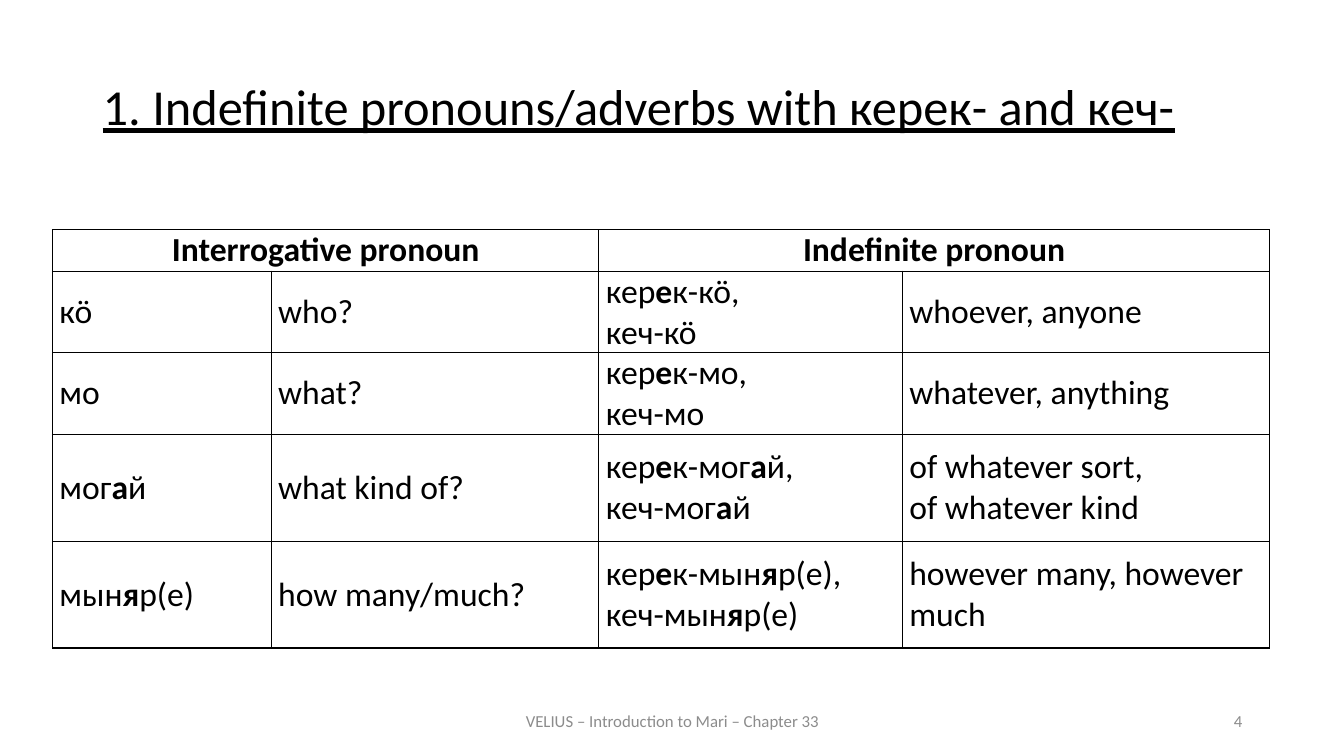
from lxml import etree
from pptx import Presentation
from pptx.dml.color import RGBColor
from pptx.enum.text import MSO_ANCHOR, PP_ALIGN
from pptx.oxml.ns import qn
from pptx.util import Inches, Pt

LEFT, CENTER, RIGHT, JUSTIFY = PP_ALIGN.LEFT, PP_ALIGN.CENTER, PP_ALIGN.RIGHT, PP_ALIGN.JUSTIFY
TOP, MIDDLE = MSO_ANCHOR.TOP, MSO_ANCHOR.MIDDLE
BLACK = RGBColor(0x00, 0x00, 0x00)
GREY = RGBColor(0x8C, 0x8C, 0x8C)
FONT = "Calibri"

COLUMN_WIDTHS = [2.17, 3.25, 3.01, 3.64]
ROW_HEIGHTS = [0.41, 0.81, 0.81, 1.06, 1.06]
HEADINGS = ["Interrogative pronoun", "Indefinite pronoun"]
STRESS = "*"
PRONOUNS = [
    ["кӧ", "who?", "кер*е*к-кӧ,\nкеч-кӧ", "whoever, anyone"],
    ["мо", "what?", "кер*е*к-мо,\nкеч-мо", "whatever, anything"],
    ["мог*а*й", "what kind of?", "кер*е*к-мог*а*й,\nкеч-мог*а*й",
     "of whatever sort,\nof whatever kind"],
    ["мын*я*р(е)", "how many/much?", "кер*е*к-мын*я*р(е),\nкеч-мын*я*р(е)",
     "however many, however much"],
]


def add_span(para, text, size, color, bold=False, underline=False):
    """Append one formatted run to a paragraph."""
    span = para.add_run()
    span.text = text
    span.font.name = FONT
    span.font.size = Pt(size)
    span.font.color.rgb = color
    span.font.bold = bold
    span.font.underline = underline


def add_line(page, box, text, size, color, align, anchor, underline=False):
    """Place a one-line text box and return its paragraph."""
    frame = page.shapes.add_textbox(*map(Inches, box)).text_frame
    frame.word_wrap = True
    frame.vertical_anchor = anchor
    para = frame.paragraphs[0]
    para.alignment = align
    add_span(para, text, size, color, underline=underline)
    return para


def add_title(page, box):
    """Place the underlined title."""
    para = add_line(page, box, "1. Indefinite pronouns/adverbs with керек- and кеч-",
                    36, BLACK, JUSTIFY, TOP, underline=True)
    para.line_spacing = 0.9
    para.space_before = Pt(12)


def add_footer(page, box):
    """Place the centred course name and the page number at the right."""
    left, top, width, height = box
    add_line(page, (left, top, 4.5, height), "VELIUS – Introduction to Mari – Chapter 33",
             12, GREY, CENTER, MIDDLE)
    add_line(page, (left + width - 3, top, 3, height), "4", 12, GREY, RIGHT, MIDDLE)


def draw_borders(cell):
    """Give a cell thin black lines on all four sides."""
    properties = cell._tc.get_or_add_tcPr()
    for index, side in enumerate(("a:lnL", "a:lnR", "a:lnT", "a:lnB")):
        line = etree.Element(qn(side), w=str(Pt(1)))
        fill = etree.SubElement(line, qn("a:solidFill"))
        etree.SubElement(fill, qn("a:srgbClr"), val=str(BLACK))
        properties.insert(index, line)


def fill_cell(cell, text, align, anchor, bold=False):
    """Write text into a cell, switching bold at each stress mark."""
    cell.vertical_anchor = anchor
    frame = cell.text_frame
    for number, line in enumerate(text.split("\n")):
        para = frame.add_paragraph() if number else frame.paragraphs[0]
        para.alignment = align
        for index, part in enumerate(line.split(STRESS)):
            add_span(para, part, 24, BLACK, bold=bold or index % 2 == 1)


def add_pronoun_table(page, box):
    """Place the table of interrogative and indefinite pronouns."""
    table = page.shapes.add_table(len(ROW_HEIGHTS), len(COLUMN_WIDTHS),
                                  *map(Inches, box)).table
    table.first_row = table.horz_banding = False
    for column, width in zip(table.columns, COLUMN_WIDTHS):
        column.width = Inches(width)
    for row, height in zip(table.rows, ROW_HEIGHTS):
        row.height = Inches(height)
    for cell in table.iter_cells():
        cell.margin_left = cell.margin_right = Inches(0.07)
        cell.margin_top = cell.margin_bottom = 0
        cell.fill.background()
        draw_borders(cell)
    for index, heading in enumerate(HEADINGS):
        cell = table.cell(0, 2 * index)
        cell.merge(table.cell(0, 2 * index + 1))
        fill_cell(cell, heading, CENTER, TOP, bold=True)
    for row, texts in enumerate(PRONOUNS, start=1):
        for column, text in enumerate(texts):
            fill_cell(table.cell(row, column), text, LEFT, MIDDLE)


def main():
    """Build the slide and save the deck."""
    deck = Presentation()
    deck.slide_width, deck.slide_height = Inches(13.33), Inches(7.5)
    page = deck.slides.add_slide(deck.slide_layouts[6])
    add_title(page, (0.92, 0.76, 11.5, 0.83))
    add_pronoun_table(page, (0.52, 2.28, sum(COLUMN_WIDTHS), sum(ROW_HEIGHTS)))
    add_footer(page, (4.42, 6.95, 8, 0.4))
    deck.save("out.pptx")


if __name__ == "__main__":
    main()
